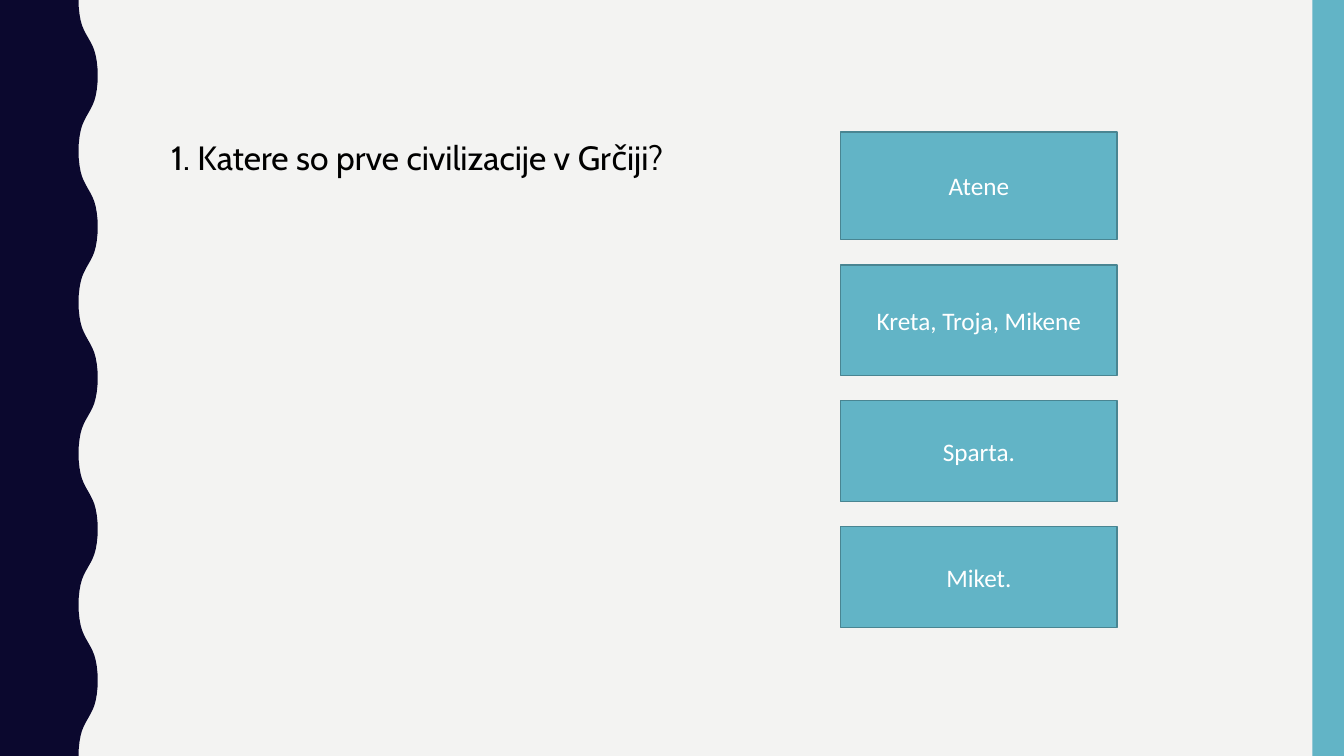
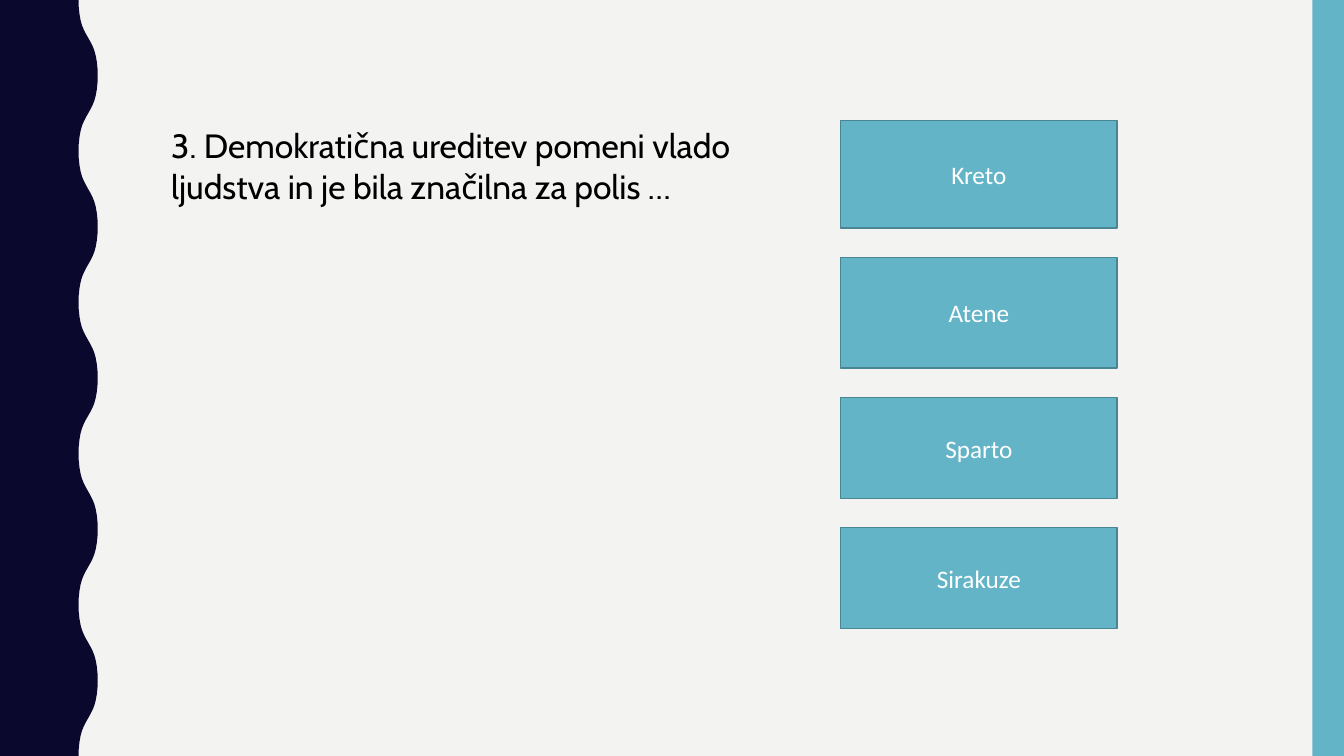
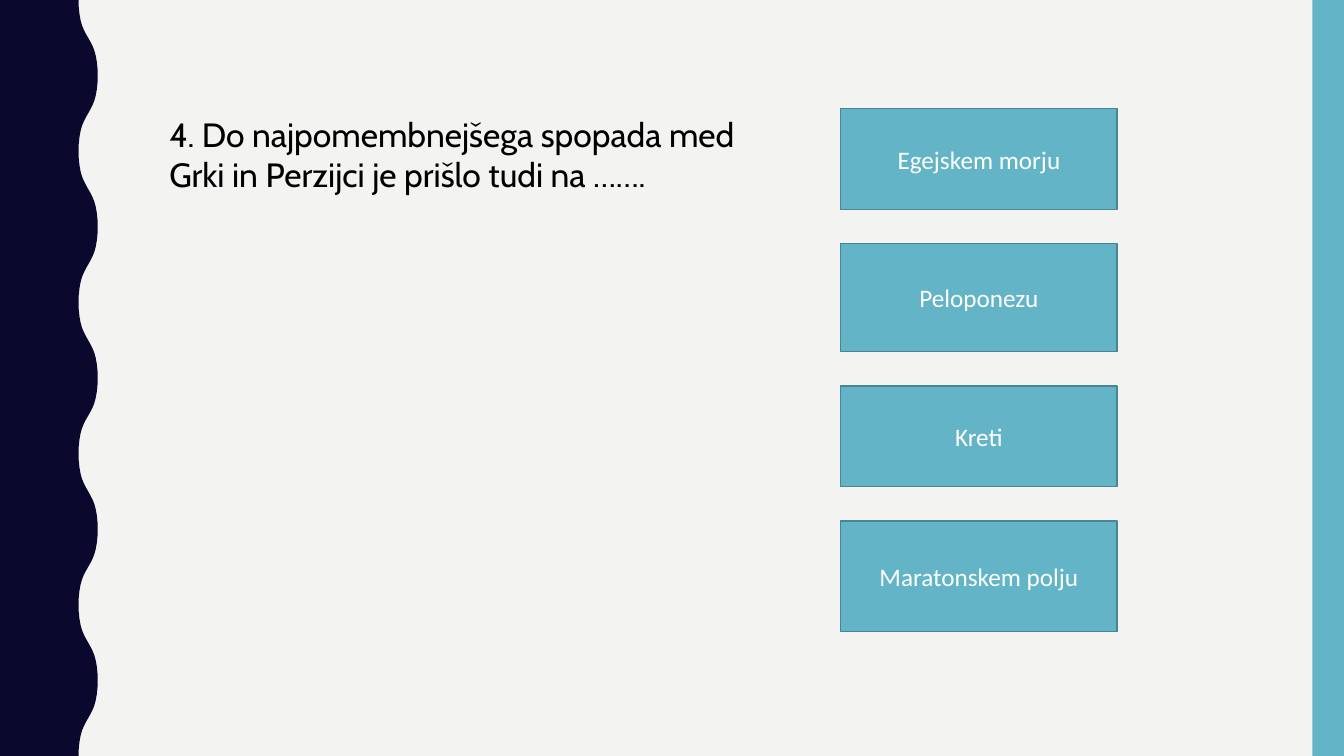
from dataclasses import dataclass

from pptx import Presentation
from pptx.dml.color import RGBColor
from pptx.enum.shapes import MSO_SHAPE
from pptx.enum.text import MSO_ANCHOR, MSO_AUTO_SIZE, PP_ALIGN
from pptx.util import Pt


@dataclass(frozen=True)
class Theme:
    background: RGBColor = RGBColor.from_string("F3F3F2")
    wave: RGBColor = RGBColor.from_string("0B082E")
    accent: RGBColor = RGBColor.from_string("62B4C6")
    outline: RGBColor = RGBColor.from_string("498592")
    question_text: RGBColor = RGBColor.from_string("000000")
    answer_text: RGBColor = RGBColor.from_string("FFFFFF")
    question_font: str = "Cabin"
    answer_font: str = "Calibri"
    question_size: int = 24
    answer_size: int = 18


theme = Theme()

SLIDE_WIDTH, SLIDE_HEIGHT = 960, 540
BAND_WIDTH = 22.5
HALF_WAVE = 54
WAVE_MIDDLE = 63
ANSWER_LEFT, ANSWER_WIDTH = 600.5, 197.5

# Each answer is (text, box height); gap is the space between the boxes.
questions = [
    {
        "text": "1. Katere so prve civilizacije v Grčiji?",
        "left": 115.2, "top": 94.3, "width": 442, "height": 36, "gap": 18,
        "answers": [("Atene", 77), ("Kreta, Troja, Mikene", 79),
                    ("Sparta.", 72), ("Miket.", 72)],
    },
    {
        "text": "3. Demokratična ureditev pomeni vlado ljudstva in je bila "
                "značilna za polis …",
        "left": 115.2, "top": 86, "width": 466, "height": 65.5, "gap": 21,
        "answers": [("Kreto", 77), ("Atene", 79),
                    ("Sparto", 72), ("Sirakuze", 72)],
    },
    {
        "text": "4. Do najpomembnejšega spopada med Grki in Perzijci je "
                "prišlo tudi na …….",
        "left": 113.8, "top": 77.6, "width": 442, "height": 65.5, "gap": 24.5,
        "answers": [("Egejskem morju", 72), ("Peloponezu", 77),
                    ("Kreti", 72), ("Maratonskem polju", 79)],
    },
]


def paint(shape, fill, outline=None):
    shape.shadow.inherit = False
    shape.fill.solid()
    shape.fill.fore_color.rgb = fill
    if outline is None:
        shape.line.fill.background()
    else:
        shape.line.color.rgb = outline
        shape.line.width = Pt(1)


def write(shape, text, font, size, color):
    shape.text_frame.word_wrap = True
    paragraph = shape.text_frame.paragraphs[0]
    paragraph.text = text
    run_font = paragraph.runs[0].font
    run_font.name = font
    run_font.size = Pt(size)
    run_font.color.rgb = color
    return paragraph


presentation = Presentation()
presentation.slide_width = Pt(SLIDE_WIDTH)
presentation.slide_height = Pt(SLIDE_HEIGHT)

layout = presentation.slide_layouts[6]
layout.background.fill.solid()
layout.background.fill.fore_color.rgb = theme.background
for placeholder in list(layout.placeholders):
    placeholder.element.getparent().remove(placeholder.element)

slides = [presentation.slides.add_slide(layout) for _ in questions]

# The wave repeats one half, mirrored every second time.
quarter = [(56.2, 0), (56.3, 5), (56.8, 10), (57.6, 14.4),
           (58.6, 18), (59.8, 21), (61.3, 24)]
half = quarter + [(WAVE_MIDDLE, HALF_WAVE / 2)] + [
    (2 * WAVE_MIDDLE - x, HALF_WAVE - y) for x, y in reversed(quarter)]
edge = []
for index in range(SLIDE_HEIGHT // HALF_WAVE):
    for x, y in half:
        wave_x = x if index % 2 == 0 else 2 * WAVE_MIDDLE - x
        edge.append((Pt(wave_x), Pt(index * HALF_WAVE + y)))

# Layouts cannot create shapes, so both bands are drawn on a slide and moved.
builder = slides[0].shapes.build_freeform(0, 0)
builder.add_line_segments(edge + [(0, Pt(SLIDE_HEIGHT))], close=True)
wave = builder.convert_to_shape()
paint(wave, theme.wave)
band = slides[0].shapes.add_shape(
    MSO_SHAPE.RECTANGLE, Pt(SLIDE_WIDTH - BAND_WIDTH), 0,
    Pt(BAND_WIDTH), Pt(SLIDE_HEIGHT))
paint(band, theme.accent)
for shape in (wave, band):
    layout.shapes.element.append(shape.element)

for slide, question in zip(slides, questions):
    top = question["top"]
    for answer, height in question["answers"]:
        box = slide.shapes.add_shape(
            MSO_SHAPE.RECTANGLE, Pt(ANSWER_LEFT), Pt(top),
            Pt(ANSWER_WIDTH), Pt(height))
        paint(box, theme.accent, theme.outline)
        paragraph = write(box, answer, theme.answer_font,
                          theme.answer_size, theme.answer_text)
        paragraph.alignment = PP_ALIGN.CENTER
        box.text_frame.vertical_anchor = MSO_ANCHOR.MIDDLE
        top += height + question["gap"]

    question_box = slide.shapes.add_textbox(
        Pt(question["left"]), Pt(question["top"]),
        Pt(question["width"]), Pt(question["height"]))
    write(question_box, question["text"], theme.question_font,
          theme.question_size, theme.question_text)
    question_box.text_frame.auto_size = MSO_AUTO_SIZE.SHAPE_TO_FIT_TEXT

presentation.save("out.pptx")
